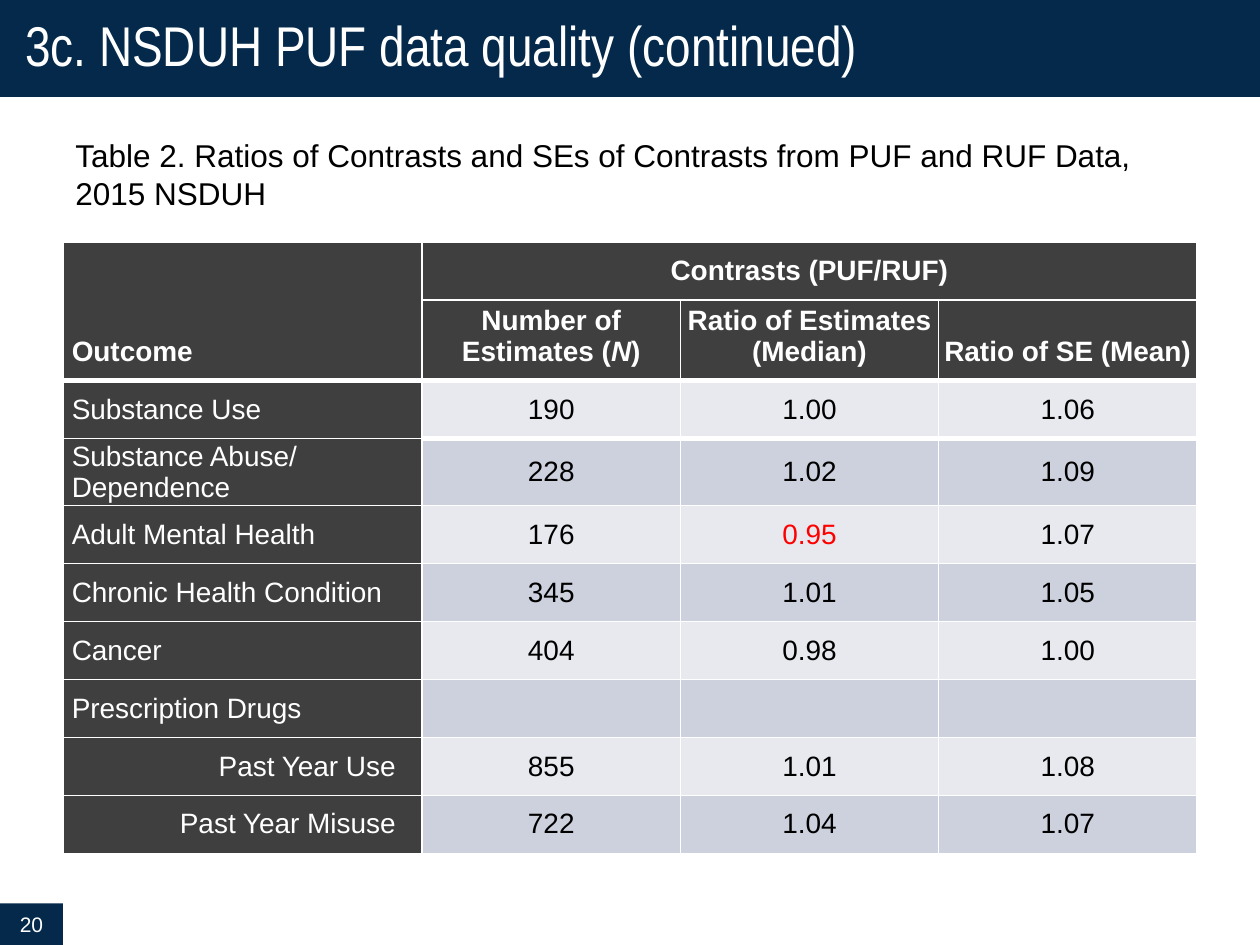
from lxml import etree
from pptx import Presentation
from pptx import util as u
from pptx.dml.color import RGBColor
from pptx.enum import shapes, text
from pptx.oxml.ns import qn

COLORS = {"navy": "04294A", "white": "FFFFFF", "black": "000000", "red": "FF0000",
          "dark": "3F3F3F", "light": "E7E9EF", "mid": "CCD1DD"}
LEFT, CENTER, RIGHT = text.PP_ALIGN.LEFT, text.PP_ALIGN.CENTER, text.PP_ALIGN.RIGHT
MIDDLE, BOTTOM = text.MSO_ANCHOR.MIDDLE, text.MSO_ANCHOR.BOTTOM

COLUMN_WIDTHS = [2.85, 2.05, 2.05, 2.05]
ROW_HEIGHTS = [0.46, 0.64, 0.46, 0.52] + [0.46] * 6
SUBHEADS = [["Number of Estimates (", "N", ")"],
            ["Ratio of Estimates (Median)"],
            ["Ratio of SE (Mean)"]]
OUTCOMES = [
    ("Substance Use", "190", "1.00", "1.06"),
    ("Substance Abuse/ Dependence", "228", "1.02", "1.09"),
    ("Adult Mental Health", "176", "0.95", "1.07"),
    ("Chronic Health Condition", "345", "1.01", "1.05"),
    ("Cancer", "404", "0.98", "1.00"),
    ("Prescription Drugs", "", "", ""),
    ("Past Year Use", "855", "1.01", "1.08"),
    ("Past Year Misuse", "722", "1.04", "1.07"),
]
SUB_OUTCOMES = {"Past Year Use", "Past Year Misuse"}
FLAGGED = ("Adult Mental Health", 2)


def rgb(name):
    return RGBColor.from_string(COLORS[name])


def write(para, pieces, size, color, align=LEFT, font="Arial", bold=False):
    para.alignment = align
    for piece in pieces:
        span = para.add_run()
        span.text = piece
        span.font.name = font
        span.font.size = u.Pt(size)
        span.font.bold = bold
        span.font.color.rgb = rgb(color)


def add_panel(page, box):
    panel = page.shapes.add_shape(shapes.MSO_SHAPE.RECTANGLE, *map(u.Inches, box))
    panel.shadow.inherit = False
    panel.fill.solid()
    panel.fill.fore_color.rgb = rgb("navy")
    panel.line.fill.background()
    panel.text_frame.vertical_anchor = MIDDLE
    return panel.text_frame


def add_title_bar(page, box):
    frame = add_panel(page, box)
    frame.margin_left = frame.margin_right = u.Inches(0.2)
    frame.margin_top = frame.margin_bottom = u.Inches(0.1)
    para = frame.paragraphs[0]
    para.line_spacing = 0.9
    write(para, ["3c. NSDUH PUF data quality (continued)"], 32, "white", font="Arial Narrow")


def add_page_number(page, box):
    frame = add_panel(page, box)
    frame.margin_left = frame.margin_right = 0
    write(frame.paragraphs[0], ["20"], 12, "white", CENTER)


def add_caption(page, box):
    frame = page.shapes.add_textbox(*map(u.Inches, box)).text_frame
    frame.word_wrap = True
    para = frame.paragraphs[0]
    para.space_before = u.Pt(3.6)
    write(para, ["Table 2. Ratios of Contrasts and SEs of Contrasts from PUF and RUF Data,",
                 " ", "2015 NSDUH"], 18, "black")
    para.runs[1].font.size = u.Pt(20)


def style_cell(cell, fill, anchor=MIDDLE, sides=0.07, bottom=0, top_line=1, bottom_line=1):
    cell.vertical_anchor = anchor
    cell.margin_left = cell.margin_right = u.Inches(sides)
    cell.margin_top, cell.margin_bottom = 0, u.Inches(bottom)
    # Borders come before the fill in the cell properties
    props = cell._tc.get_or_add_tcPr()
    for side, width in (("L", 1), ("R", 1), ("T", top_line), ("B", bottom_line)):
        line = etree.SubElement(props, qn(f"a:ln{side}"), w=str(u.Pt(width)))
        paint = etree.SubElement(line, qn("a:solidFill"))
        etree.SubElement(paint, qn("a:srgbClr"), val=COLORS["white"])
    cell.fill.solid()
    cell.fill.fore_color.rgb = rgb(fill)


def fill_header(table):
    for column in range(4):
        style_cell(table.cell(0, column), "dark", BOTTOM if column == 0 else MIDDLE,
                   bottom=0.1 if column == 0 else 0, bottom_line=3 if column == 0 else 1)
        style_cell(table.cell(1, column), "dark", BOTTOM, sides=0, bottom=0.1, bottom_line=3)
    table.cell(0, 0).merge(table.cell(1, 0))
    table.cell(0, 1).merge(table.cell(0, 3))
    write(table.cell(0, 0).text_frame.paragraphs[0], ["Outcome"], 16, "white", bold=True)
    write(table.cell(0, 1).text_frame.paragraphs[0], ["Contrasts (PUF/RUF)"],
          16, "white", CENTER, bold=True)
    for column, pieces in enumerate(SUBHEADS, start=1):
        para = table.cell(1, column).text_frame.paragraphs[0]
        write(para, pieces, 16, "white", CENTER, bold=True)
        for span in para.runs:
            span.font.italic = span.text == "N"


def fill_outcomes(table):
    for index, (outcome, *values) in enumerate(OUTCOMES):
        row, first = index + 2, index == 0
        top_line = 3 if first else 1
        # Outcome name
        cell = table.cell(row, 0)
        style_cell(cell, "dark", top_line=top_line)
        nested = outcome in SUB_OUTCOMES
        if nested:
            cell.margin_right = u.Inches(0.21)
        write(cell.text_frame.paragraphs[0], [outcome], 16, "white", RIGHT if nested else LEFT)
        # Values on alternating bands
        for column, value in enumerate(values, start=1):
            cell = table.cell(row, column)
            style_cell(cell, "mid" if index % 2 else "light", top_line=top_line,
                       bottom_line=3 if first else 1)
            if value:
                color = "red" if (outcome, column) == FLAGGED else "black"
                write(cell.text_frame.paragraphs[0], [value], 16, color, CENTER)


def add_contrast_table(page, box):
    table = page.shapes.add_table(len(ROW_HEIGHTS), len(COLUMN_WIDTHS),
                                  *map(u.Inches, box)).table
    for column, width in zip(table.columns, COLUMN_WIDTHS):
        column.width = u.Inches(width)
    for row, height in zip(table.rows, ROW_HEIGHTS):
        row.height = u.Inches(height)
    fill_header(table)
    fill_outcomes(table)


def main():
    deck = Presentation()
    deck.slide_width, deck.slide_height = u.Inches(10), u.Inches(7.5)
    page = deck.slides.add_slide(deck.slide_layouts[6])
    add_title_bar(page, (0, 0, 10, 0.77))
    add_caption(page, (0.5, 1, 9, 0.75))
    add_page_number(page, (0, 7.17, 0.5, 0.33))
    add_contrast_table(page, (0.5, 1.92, 9, sum(ROW_HEIGHTS)))
    deck.save("out.pptx")


if __name__ == "__main__":
    main()
